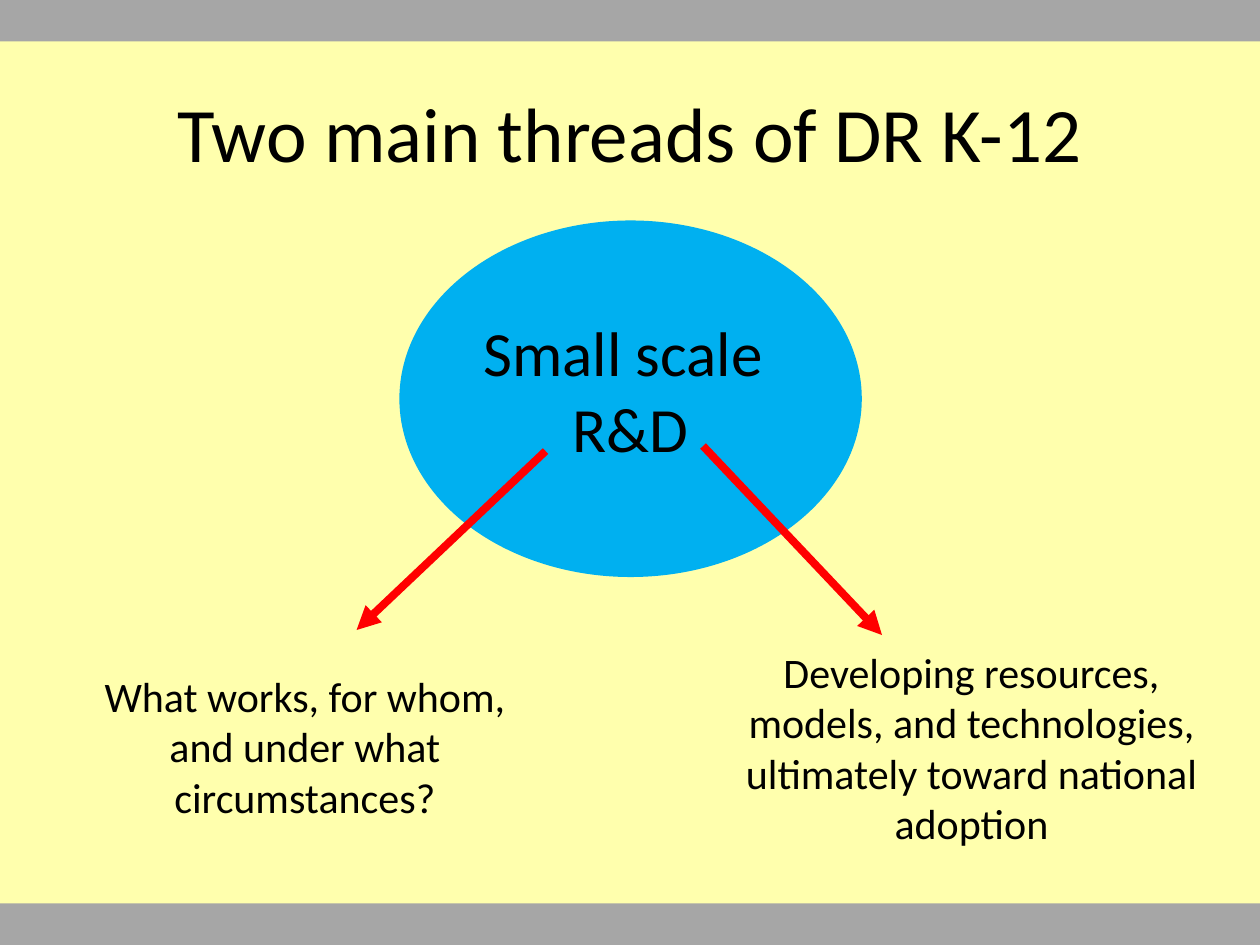
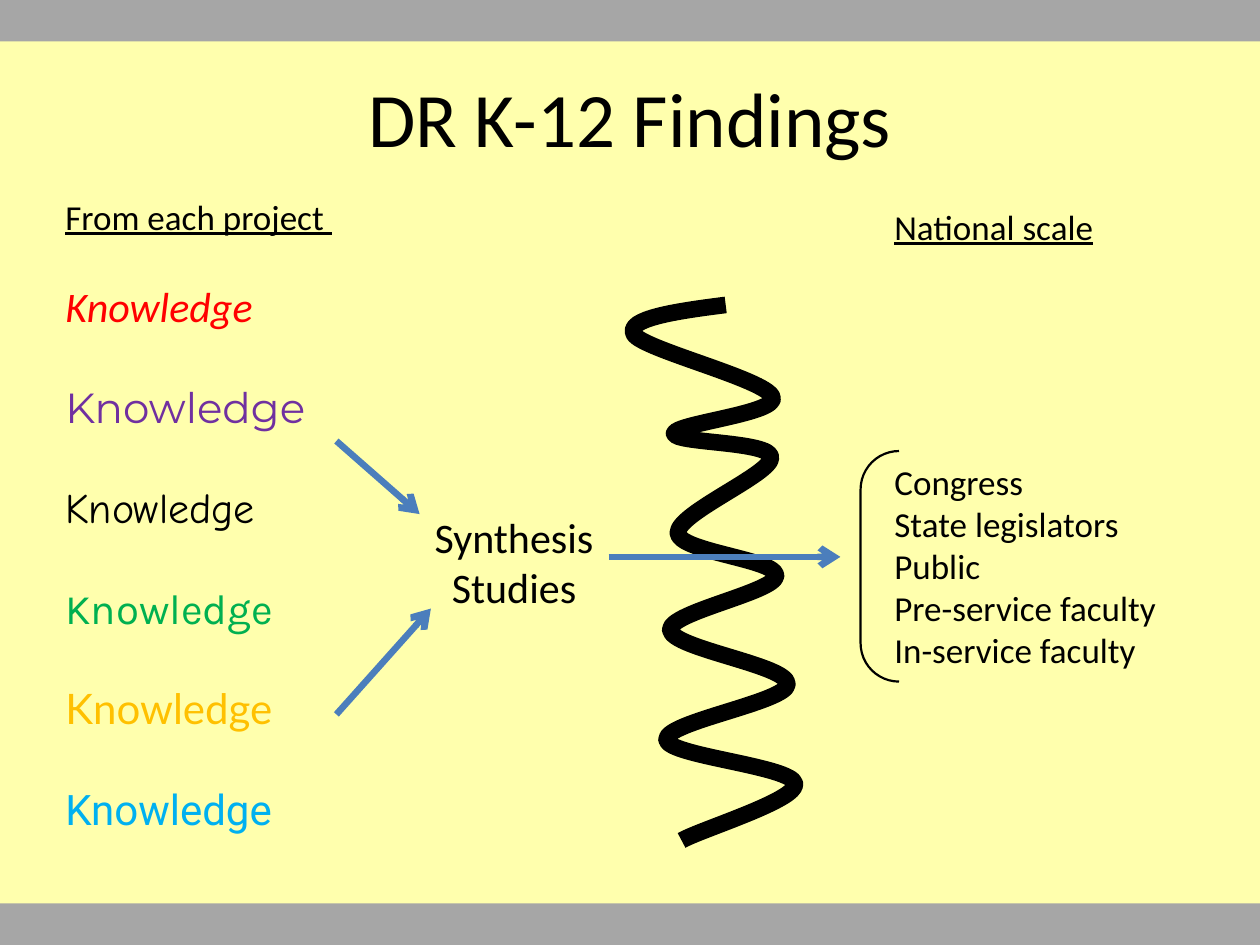
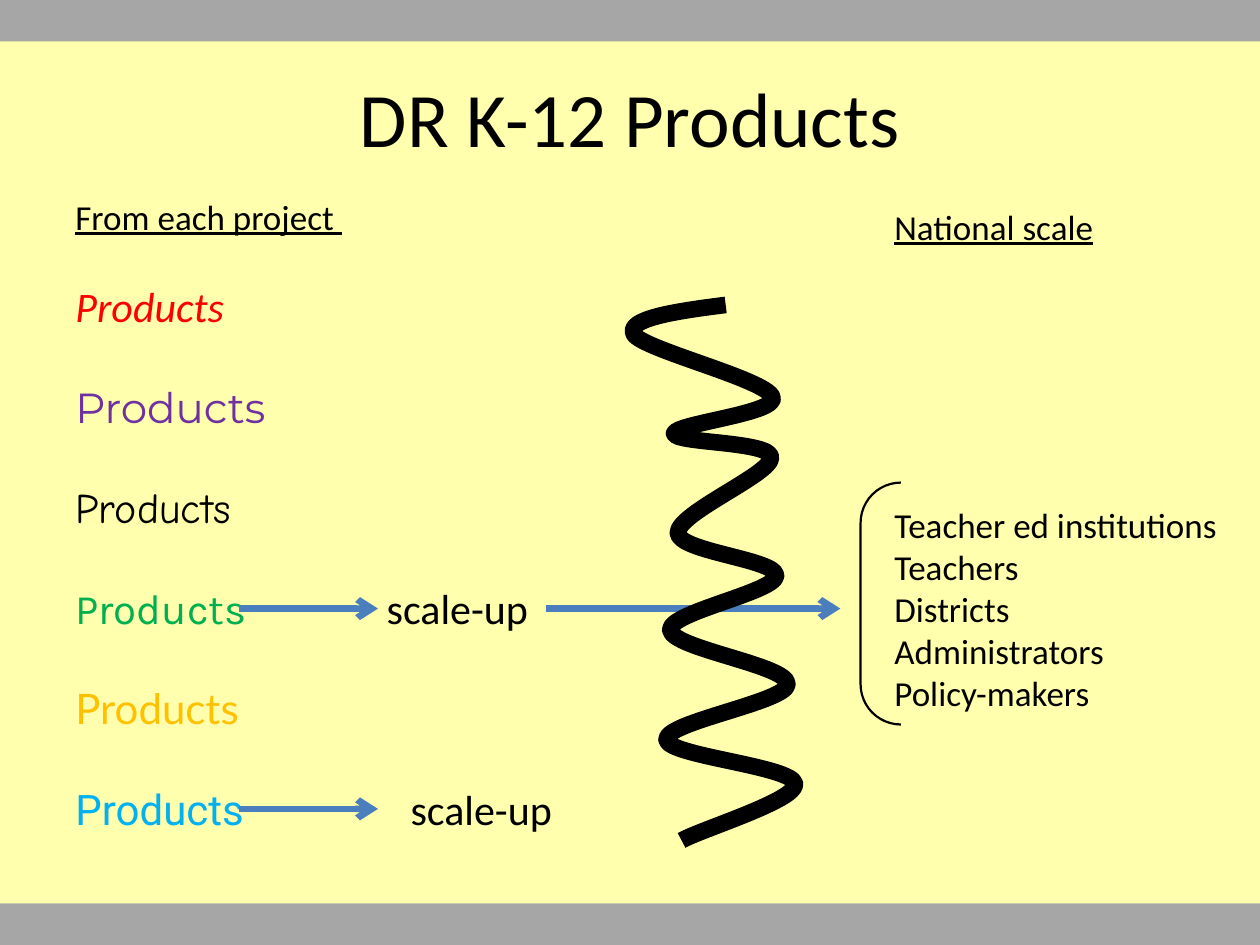
from dataclasses import dataclass

from lxml.etree import SubElement
from pptx import Presentation
from pptx.dml.color import RGBColor
from pptx.enum.shapes import MSO_CONNECTOR as Connector, MSO_SHAPE as Shape
from pptx.enum.text import MSO_ANCHOR as Anchor, PP_ALIGN as Align
from pptx.oxml.ns import qn
from pptx.util import Inches, Pt


@dataclass(frozen=True)
class Theme:
    font: str = "Calibri"
    title_size: int = 44
    hub_size: int = 36
    text_size: int = 24
    list_size: int = 20
    background: RGBColor = RGBColor(0xFF, 0xFF, 0xAD)
    band: RGBColor = RGBColor(0xA6, 0xA6, 0xA6)
    text: RGBColor = RGBColor(0, 0, 0)
    hub: RGBColor = RGBColor(0x00, 0xB0, 0xF0)
    thread_arrow: RGBColor = RGBColor(0xFF, 0, 0)
    flow_arrow: RGBColor = RGBColor(0x4B, 0x7E, 0xBC)


theme = Theme()
PROJECT_STYLES = [
    (theme.font, RGBColor(0xFF, 0, 0)),
    ("Montserrat", RGBColor(0x70, 0x30, 0xA0)),
    ("Comic Neue", theme.text),
    ("Karla", RGBColor(0x00, 0xB0, 0x50)),
    ("Lato", RGBColor(0xFF, 0xC0, 0)),
    ("Roboto", RGBColor(0x00, 0xB0, 0xF0)),
]
BARRIER_START = (5.76, 2.42)
BARRIER_CURVES = [
    (5.36, 2.47), (4.97, 2.53), (5.03, 2.65), (5.09, 2.77), (6.08, 3.01), (6.13, 3.15),
    (6.19, 3.28), (5.36, 3.36), (5.35, 3.44), (5.35, 3.52), (6.12, 3.5), (6.12, 3.63),
    (6.13, 3.76), (5.38, 4.07), (5.38, 4.23), (5.39, 4.38), (6.17, 4.44), (6.16, 4.57),
    (6.15, 4.7), (5.31, 4.86), (5.32, 5), (5.34, 5.15), (6.26, 5.28), (6.25, 5.43),
    (6.25, 5.57), (5.28, 5.73), (5.29, 5.87), (5.3, 6), (6.29, 6.08), (6.31, 6.22),
    (6.33, 6.35), (5.57, 6.58), (5.41, 6.67),
]


def add_text(slide, box, text, size, align=Align.LEFT):
    """Add a wrapping text box and return its paragraphs."""
    shape = slide.shapes.add_textbox(*map(Inches, box))
    shape.text_frame.word_wrap = True
    shape.text_frame.text = text
    for paragraph in shape.text_frame.paragraphs:
        paragraph.alignment = align
        font = paragraph.runs[0].font
        font.name, font.size, font.color.rgb = theme.font, Pt(size), theme.text
    return shape.text_frame.paragraphs


def add_arrow(slide, start, end, color, width, head):
    arrow = slide.shapes.add_connector(Connector.STRAIGHT, *map(Inches, start + end))
    arrow.line.color.rgb = color
    arrow.line.width = Pt(width)
    SubElement(arrow.line._get_or_add_ln(), qn("a:tailEnd"), type=head)
    SubElement(arrow._element.spPr, qn("a:effectLst"))


presentation = Presentation()
presentation.slide_width, presentation.slide_height = Inches(10), Inches(7.5)
background = presentation.slide_master.background.fill
background.solid()
background.fore_color.rgb = theme.background

# Titles and grey bands
slides = []
for title_text, title_top in [("Two main threads of DR K-12", 0.42),
                              ("DR K-12 Findings", 0.3), ("DR K-12 Products", 0.3)]:
    slide = presentation.slides.add_slide(presentation.slide_layouts[5])
    slides.append(slide)
    title = slide.shapes.title
    title.left, title.top, title.width, title.height = map(Inches, (0.5, title_top, 9, 1.25))
    title.text_frame.text = title_text
    title.text_frame.vertical_anchor = Anchor.MIDDLE
    paragraph = title.text_frame.paragraphs[0]
    paragraph.alignment = Align.CENTER
    font = paragraph.runs[0].font
    font.name, font.size, font.color.rgb = theme.font, Pt(theme.title_size), theme.text
    for band_top in (0, 7.17):
        band = slide.shapes.add_shape(
            Shape.RECTANGLE, 0, Inches(band_top), Inches(10), Inches(0.33))
        band.shadow.inherit = False
        band.fill.solid()
        band.fill.fore_color.rgb = theme.band
        band.line.fill.background()
threads, findings, products = slides

# Two main threads
hub = threads.shapes.add_shape(Shape.OVAL, *map(Inches, (3.17, 1.75, 3.67, 2.83)))
hub.shadow.inherit = False
hub.fill.solid()
hub.fill.fore_color.rgb = theme.hub
hub.line.fill.background()
add_text(threads, (3.54, 2.44, 2.92, 1.31), "Small scale \nR&D", theme.hub_size, Align.CENTER)
add_text(threads, (0.67, 5.27, 3.5, 1.31),
         "What works, for whom, and under what circumstances?", theme.text_size, Align.CENTER)
add_text(threads, (5.67, 5.08, 4.08, 1.72),
         "Developing resources, models, and technologies, ultimately toward national adoption",
         theme.text_size, Align.CENTER)
for start, end in [((4.33, 3.58), (2.83, 5)), ((5.58, 3.54), (7, 5.04))]:
    add_arrow(threads, start, end, theme.thread_arrow, 4.5, "triangle")

# Findings and products: from each project, past the barrier, to national scale
flows = [
    dict(slide=findings, word="Knowledge", left=0.42, scale_ups={}, audience_gap=122,
         audience="Congress\nState legislators\nPublic\nPre-service faculty\nIn-service faculty",
         bracket_top=3.58, bracket_height=1.83, arrows_behind=[],
         arrows_in_front=[((2.67, 3.5), (3.33, 4.08)), ((2.67, 5.67), (3.42, 4.83)),
                          ((4.83, 4.42), (6.67, 4.42))]),
    dict(slide=products, word="Products", left=0.5, scale_ups={3: 2.47, 5: 2.66},
         audience_gap=146.4,
         audience="Teacher ed institutions\nTeachers\nDistricts\nAdministrators\nPolicy-makers",
         bracket_top=3.83, bracket_height=1.92, arrows_in_front=[],
         arrows_behind=[((1.9, 4.83), (3, 4.83)), ((1.9, 6.42), (3, 6.42)),
                        ((4.33, 4.83), (6.67, 4.83))]),
]
for flow in flows:
    slide = flow["slide"]

    lines = ["From each project "] + [flow["word"]] * len(PROJECT_STYLES)
    heading, *entries = add_text(
        slide, (flow["left"], 1.5, 4.58, 5.55), "\n".join(lines), theme.text_size)
    heading.space_after = Pt(24.4)
    heading.runs[0].font.size = Pt(theme.list_size)
    heading.runs[0].font.underline = True
    for index, (entry, (font_name, color)) in enumerate(zip(entries, PROJECT_STYLES)):
        entry.line_spacing = Pt(29.3)
        entry.space_after = Pt(28.1)
        font = entry.runs[0].font
        font.name, font.color.rgb, font.italic = font_name, color, index == 0
        if index in flow["scale_ups"]:
            tabs = SubElement(entry._p.get_or_add_pPr(), qn("a:tabLst"))
            SubElement(tabs, qn("a:tab"), pos=str(Inches(flow["scale_ups"][index])), algn="l")
            scale_up = entry.add_run()
            scale_up.text = "\tscale-up"
            font = scale_up.font
            font.name, font.size, font.color.rgb = theme.font, Pt(theme.text_size), theme.text

    heading, *_ = add_text(
        slide, (7, 1.58, 3, 4), "National scale\n" + flow["audience"], theme.list_size)
    heading.space_after = Pt(flow["audience_gap"])
    heading.runs[0].font.underline = True

    height = flow["bracket_height"]
    bracket = slide.shapes.add_shape(
        Shape.LEFT_BRACKET, *map(Inches, (6.83, flow["bracket_top"], height / 6, height)))
    bracket.adjustments[0] = 1
    bracket.shadow.inherit = False
    bracket.fill.background()
    bracket.line.color.rgb = theme.text
    bracket.line.width = Pt(1.25)

    for start, end in flow["arrows_behind"]:
        add_arrow(slide, start, end, theme.flow_arrow, 3.75, "arrow")

    builder = slide.shapes.build_freeform(*map(Inches, BARRIER_START))
    builder.add_line_segments([(Inches(x), Inches(y)) for x, y in BARRIER_CURVES], close=False)
    barrier = builder.convert_to_shape()
    barrier.shadow.inherit = False
    barrier.fill.background()
    barrier.line.color.rgb = theme.text
    barrier.line.width = Pt(9.5)
    # Every three points become one Bezier curve
    outline = barrier._element.find(".//" + qn("a:path"))
    segments = outline.findall(qn("a:lnTo"))
    for first in range(0, len(segments), 3):
        curve = SubElement(outline, qn("a:cubicBezTo"))
        for segment in segments[first:first + 3]:
            curve.append(segment[0])
            outline.remove(segment)

    for start, end in flow["arrows_in_front"]:
        add_arrow(slide, start, end, theme.flow_arrow, 3.75, "arrow")

add_text(findings, (3.33, 4.01, 1.5, 0.91), "Synthesis Studies", theme.text_size, Align.CENTER)

presentation.save("out.pptx")
